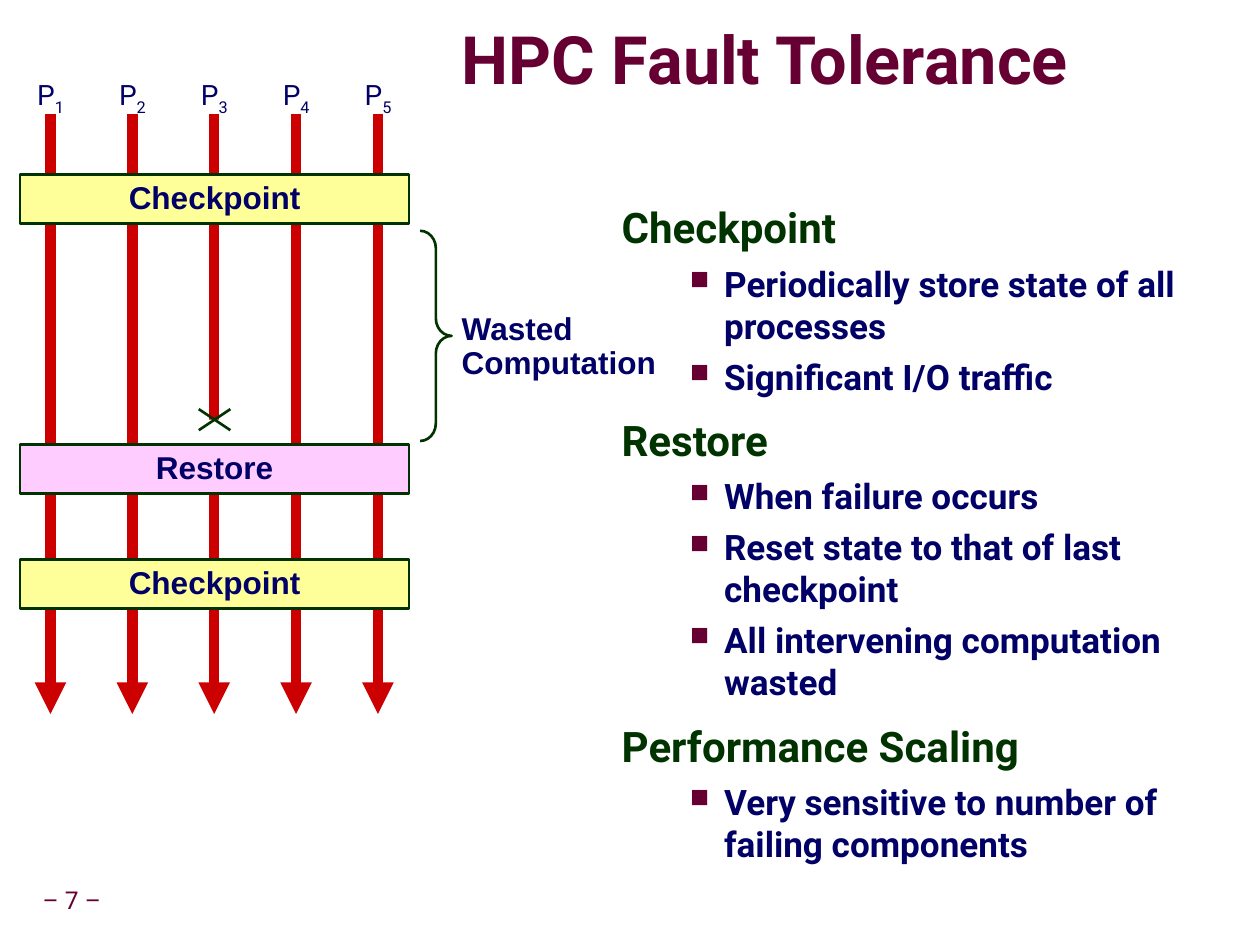
"""Build the HPC fault tolerance slide with its checkpoint and restore timeline."""
from dataclasses import dataclass
from typing import Any

import lxml.etree
import pptx
import pptx.dml.color
import pptx.enum.shapes
import pptx.enum.text
import pptx.oxml
import pptx.oxml.ns
import pptx.util

Pt = pptx.util.Pt
Align = pptx.enum.text.PP_ALIGN
Anchor = pptx.enum.text.MSO_ANCHOR
Preset = pptx.enum.shapes.MSO_SHAPE
qn = pptx.oxml.ns.qn
NAMESPACE = 'xmlns:a="http://schemas.openxmlformats.org/drawingml/2006/main"'


@dataclass(frozen=True)
class Theme:
    maroon: str = "660033"
    green: str = "003300"
    navy: str = "000066"
    red: str = "CC0000"
    yellow: str = "FFFF99"
    pink: str = "FFCCFF"
    white: str = "FFFFFF"
    shadow: str = "969696"
    text_font: str = "Roboto"
    diagram_font: str = "Arial"
    title_size: float = 38
    heading_size: float = 24
    bullet_size: float = 20
    diagram_size: float = 18
    process_size: float = 16
    page_size: float = 14
    outline: float = 1.5
    process_width: float = 6


THEME = Theme()


@dataclass(frozen=True)
class Box:
    left: float
    top: float
    width: float
    height: float

    def lengths(self) -> tuple[int, ...]:
        return tuple(Pt(v) for v in (self.left, self.top, self.width, self.height))


@dataclass(frozen=True)
class Style:
    size: float
    color: str
    font: str = THEME.text_font
    bold: bool = False


@dataclass(frozen=True)
class Stage:
    label: str
    top: float
    fill: str


@dataclass(frozen=True)
class Topic:
    heading: str
    points: tuple[str, ...]


TITLE = Style(THEME.title_size, THEME.maroon, bold=True)
HEADING = Style(THEME.heading_size, THEME.green, bold=True)
POINT = Style(THEME.bullet_size, THEME.navy, bold=True)
DIAGRAM = Style(THEME.diagram_size, THEME.navy, THEME.diagram_font, True)
PROCESS = Style(THEME.process_size, THEME.navy)
PAGE = Style(THEME.page_size, THEME.maroon)

TOPICS = (
    Topic("Checkpoint", ("Periodically store state of all processes", "Significant I/O traffic")),
    Topic("Restore", ("When failure occurs", "Reset state to that of last checkpoint",
                      "All intervening computation wasted")),
    Topic("Performance Scaling", ("Very sensitive to number of failing components",)),
)
FIRST_CHECKPOINT = Stage("Checkpoint", 99.5, THEME.yellow)
LAST_CHECKPOINT = Stage("Checkpoint", 319.2, THEME.yellow)
RESTORE = Stage("Restore", 253.5, THEME.pink)
PROCESS_COUNT, PROCESS_LEFT, PROCESS_PITCH = 5, 28.8, 46.75


def rgb(color: str) -> pptx.dml.color.RGBColor:
    return pptx.dml.color.RGBColor.from_string(color)


def assign(target: Any, values: dict[str, Any]) -> None:
    for name, value in values.items():
        setattr(target, name, value)


def set_frame(frame: Any, inset: float = 3.6, side: float | None = None,
              wrap: bool = True, anchor: Any = Anchor.TOP) -> None:
    side = inset if side is None else side
    assign(frame, {"margin_left": Pt(side), "margin_right": Pt(side),
                   "margin_top": Pt(inset), "margin_bottom": Pt(inset),
                   "auto_size": pptx.enum.text.MSO_AUTO_SIZE.NONE,
                   "word_wrap": wrap, "vertical_anchor": anchor})


def add_run(paragraph: Any, text: str, style: Style) -> Any:
    run = paragraph.add_run()
    run.text = text
    run.font.color.rgb = rgb(style.color)
    assign(run.font, {"size": Pt(style.size), "name": style.font, "bold": style.bold})
    return run


def write_lines(frame: Any, lines: tuple[str, ...], style: Style, **layout: Any) -> None:
    for index, text in enumerate(lines):
        paragraph = frame.add_paragraph() if index else frame.paragraphs[0]
        assign(paragraph, layout)
        add_run(paragraph, text, style)


def add_text_frame(slide: Any, box: Box, **options: Any) -> Any:
    frame = slide.shapes.add_textbox(*box.lengths()).text_frame
    set_frame(frame, **options)
    return frame


def add_preset(slide: Any, preset: Any, box: Box, fill: str | None, outlined: bool = True) -> Any:
    shape = slide.shapes.add_shape(preset, *box.lengths())
    shape.shadow.inherit = False
    if fill:
        shape.fill.solid()
        shape.fill.fore_color.rgb = rgb(fill)
    else:
        shape.fill.background()
    if outlined:
        shape.line.color.rgb = rgb(THEME.green)
        shape.line.width = Pt(THEME.outline)
    else:
        shape.line.fill.background()
    return shape


def add_line(slide: Any, start: tuple[float, float], end: tuple[float, float],
             color: str, width: float, arrow: bool = False) -> None:
    line = slide.shapes.add_connector(pptx.enum.shapes.MSO_CONNECTOR.STRAIGHT,
                                      *(Pt(v) for v in start + end))
    line.line.color.rgb = rgb(color)
    line.line.width = Pt(width)
    if arrow:
        lxml.etree.SubElement(line.line._get_or_add_ln(), qn("a:tailEnd"), type="triangle")
    lxml.etree.SubElement(line._element.spPr, qn("a:effectLst"))


def add_title(slide: Any) -> None:
    title = slide.shapes.title
    assign(title, dict(zip(("left", "top", "width", "height"),
                           Box(263.5, 5.8, 453.6, 61.2).lengths())))
    set_frame(title.text_frame, inset=0, anchor=Anchor.MIDDLE)
    paragraph = title.text_frame.paragraphs[0]
    assign(paragraph, {"alignment": Align.LEFT, "line_spacing": 0.87})
    run = add_run(paragraph, "HPC Fault Tolerance", TITLE)
    effect = pptx.oxml.parse_xml(
        f'<a:effectLst {NAMESPACE}><a:outerShdw dist="38100" dir="2700000">'
        f'<a:srgbClr val="{THEME.shadow}"/></a:outerShdw></a:effectLst>')
    run.font._element.find(qn("a:solidFill")).addnext(effect)


def add_topics(slide: Any) -> None:
    frame = add_text_frame(slide, Box(347.8, 113.8, 347.8, 360), side=7.2)
    rows = [row for topic in TOPICS
            for row in [(topic.heading, HEADING)] + [(point, POINT) for point in topic.points]]
    for index, (text, style) in enumerate(rows):
        paragraph = frame.add_paragraph() if index else frame.paragraphs[0]
        is_point = style is POINT
        assign(paragraph, {"level": int(is_point), "line_spacing": 1.0 if is_point else 0.95,
                           "space_before": Pt(5 if is_point else 12)})
        add_run(paragraph, text, style)
        properties = paragraph._p.get_or_add_pPr()
        margin, indent = (58.5, -19.5) if is_point else (30, -30)
        properties.set("marL", str(Pt(margin)))
        properties.set("indent", str(Pt(indent)))
        if is_point:
            color = lxml.etree.SubElement(properties, qn("a:buClr"))
            lxml.etree.SubElement(color, qn("a:srgbClr"), val=THEME.maroon)
            lxml.etree.SubElement(properties, qn("a:buSzPct"), val="75000")
            lxml.etree.SubElement(properties, qn("a:buChar"), char="■")


def add_processes(slide: Any) -> None:
    centers = [PROCESS_LEFT + PROCESS_PITCH * index for index in range(PROCESS_COUNT)]
    for center in centers:
        add_line(slide, (center, 64.8), (center, 407.5), THEME.red, THEME.process_width, True)
    for number, center in enumerate(centers, 1):
        frame = add_text_frame(slide, Box(center - 23.4, 41, 46.8, 26.6), side=7.2)
        write_lines(frame, ("P",), PROCESS, alignment=Align.CENTER)
        subscript = add_run(frame.paragraphs[0], str(number), PROCESS)
        subscript.font._element.set("baseline", "-25000")


def add_stage(slide: Any, stage: Stage) -> None:
    bar = add_preset(slide, Preset.RECTANGLE, Box(11.5, stage.top, 222, 28.2), stage.fill)
    set_frame(bar.text_frame, wrap=False, anchor=Anchor.MIDDLE)
    write_lines(bar.text_frame, (stage.label,), DIAGRAM, alignment=Align.CENTER, line_spacing=0.9)


def add_failure(slide: Any) -> None:
    left, right, top, bottom = 113.5, 131.5, 233.5, 245.5
    add_preset(slide, Preset.RECTANGLE, Box(left, 239.5, 18, 18), THEME.white, outlined=False)
    for start, end in ((left, right), (right, left)):
        add_line(slide, (start, top), (end, bottom), THEME.green, THEME.outline)


def add_wasted_span(slide: Any) -> None:
    brace = add_preset(slide, Preset.RIGHT_BRACE, Box(239.8, 131.7, 18, 120), None)
    brace.adjustments[0] = 0.556
    frame = add_text_frame(slide, Box(260, 175, 118, 46), wrap=False)
    write_lines(frame, ("Wasted", "Computation"), DIAGRAM, alignment=Align.LEFT, line_spacing=0.9)


def main() -> None:
    deck = pptx.Presentation()
    assign(deck, {"slide_width": Pt(719.28), "slide_height": Pt(539.28)})
    slide = deck.slides.add_slide(deck.slide_layouts[5])
    page = add_text_frame(slide, Box(17.3, 503.3, 47.5, 22.3), wrap=False, anchor=Anchor.MIDDLE)
    write_lines(page, ("– 7 –",), PAGE, alignment=Align.CENTER, line_spacing=0.9)
    add_title(slide)
    add_topics(slide)
    add_processes(slide)
    for stage in (FIRST_CHECKPOINT, LAST_CHECKPOINT):
        add_stage(slide, stage)
    add_failure(slide)
    add_stage(slide, RESTORE)
    add_wasted_span(slide)
    deck.save("out.pptx")


if __name__ == "__main__":
    main()
